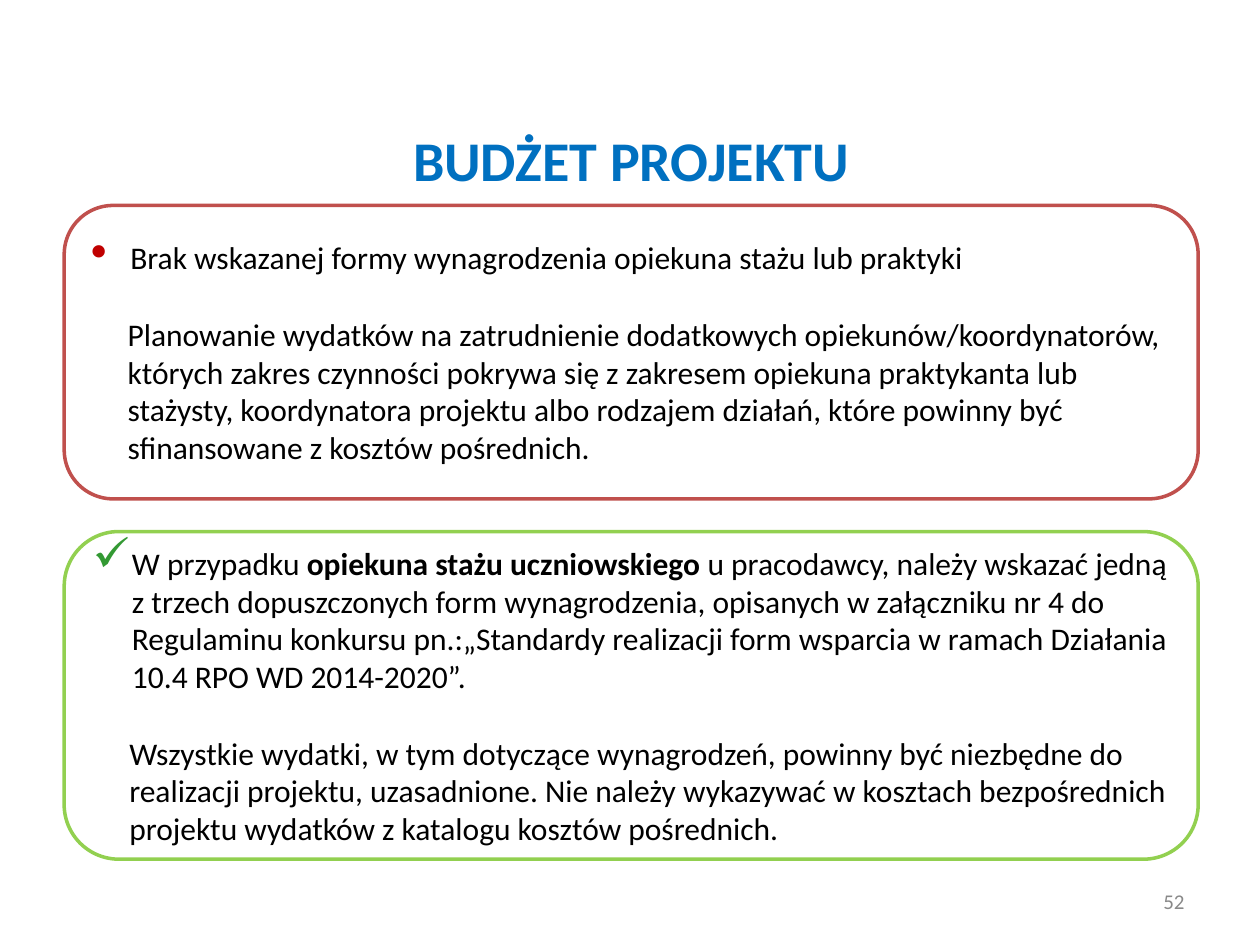
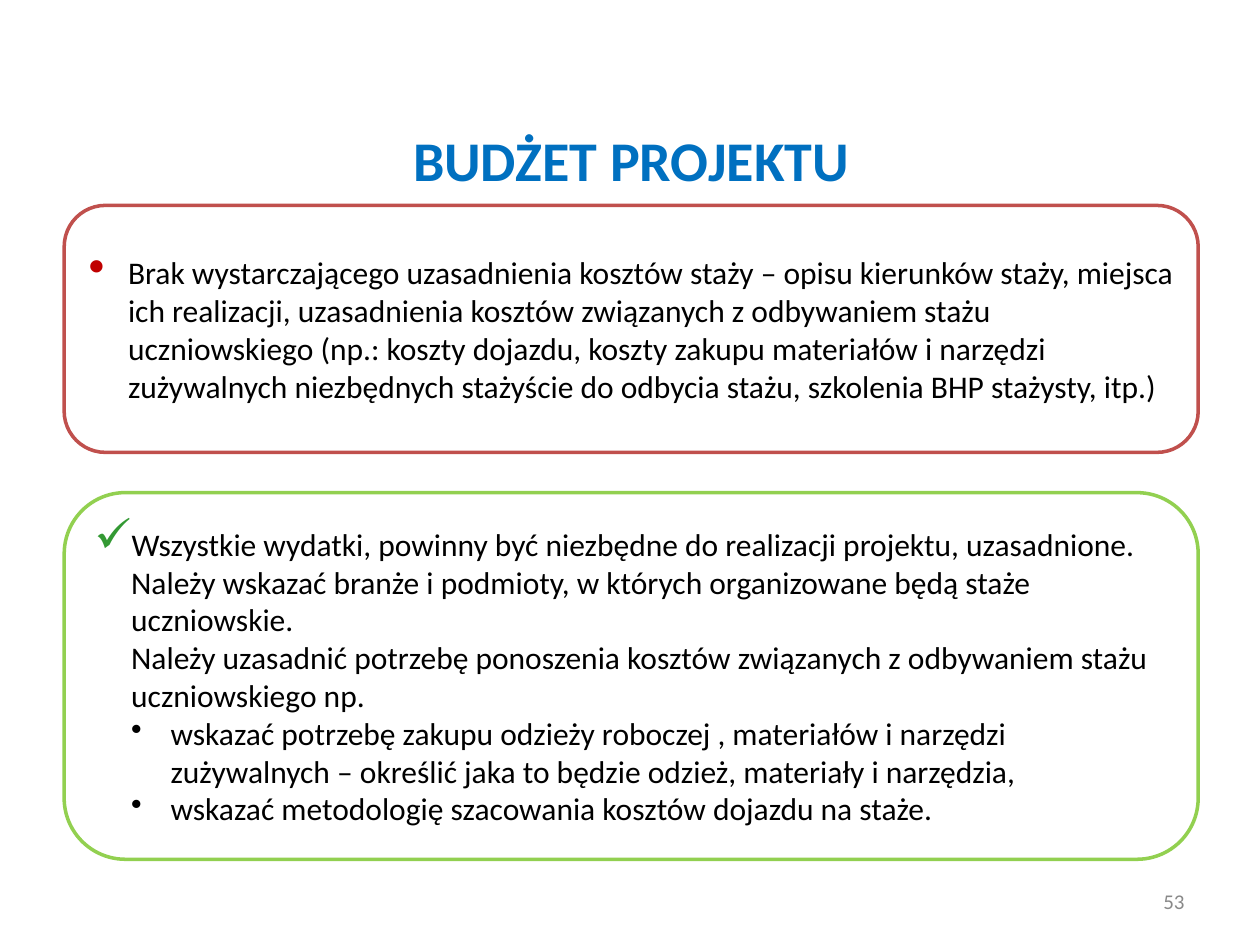
from lxml import etree
from pptx import Presentation
from pptx.dml.color import RGBColor
from pptx.enum.shapes import MSO_SHAPE
from pptx.enum.text import MSO_ANCHOR, MSO_AUTO_SIZE, PP_ALIGN
from pptx.oxml.ns import qn
from pptx.util import Pt

ROUNDED = MSO_SHAPE.ROUNDED_RECTANGLE
MIDDLE = MSO_ANCHOR.MIDDLE
NO_AUTOFIT = MSO_AUTO_SIZE.NONE
LEFT, CENTER, RIGHT = PP_ALIGN.LEFT, PP_ALIGN.CENTER, PP_ALIGN.RIGHT

FONT = "Calibri"
TITLE_BLUE, TEXT_BLACK, NUMBER_GREY = "0070C0", "000000", "898989"
PROBLEM_LINE, ADVICE_LINE = "C0504D", "92D050"
TITLE = "BUDŻET PROJEKTU"

# Bullet: character, colour and size in percent
DOT = ("•", "C00000", 150)
CHECK = ("✓", "339933", 150)
PLAIN_DOT = ("•", TEXT_BLACK, 100)

PANEL_LEFT, PANEL_WIDTH = 36.7, 648
PROBLEM_TOP, ADVICE_BOTTOM = 117.4, 491
HANG, BODY_INDENT = 22.5, 21
BLANK_LINE = 22


def color(hex_code):
    return RGBColor.from_string(hex_code)


def add_run(para, text, size, hex_code, bold=False):
    span = para.add_run()
    span.text = text
    span.font.name = FONT
    span.font.size = Pt(size)
    span.font.bold = bold
    span.font.color.rgb = color(hex_code)


def format_paragraph(para, bullet, margin, hang):
    properties = para._p.get_or_add_pPr()
    properties.set("marL", str(Pt(margin)))
    properties.set("indent", str(-Pt(hang)))
    if bullet is None:
        etree.SubElement(properties, qn("a:buNone"))
        return
    character, hex_code, percent = bullet
    bullet_color = etree.SubElement(properties, qn("a:buClr"))
    etree.SubElement(bullet_color, qn("a:srgbClr"), val=hex_code)
    etree.SubElement(properties, qn("a:buSzPct"), val=str(percent * 1000))
    etree.SubElement(properties, qn("a:buChar"), char=character)


def item(spans, bullet=None, margin=BODY_INDENT, hang=0, before=0):
    """Describe a paragraph; spans is a text or a list of (text, bold)."""
    if isinstance(spans, str):
        spans = [(spans, False)]
    return spans, bullet, margin, hang, before


def add_title(slide):
    title = slide.shapes.title
    title.left, title.top = Pt(PANEL_LEFT), Pt(73.4)
    title.width, title.height = Pt(PANEL_WIDTH), Pt(34.6)
    frame = title.text_frame
    frame.auto_size = NO_AUTOFIT
    frame.vertical_anchor = MIDDLE
    para = frame.paragraphs[0]
    para.alignment = CENTER
    add_run(para, TITLE, 32, TITLE_BLUE, bold=True)


def add_panel(slide, top, bottom, line_color, items):
    panel = slide.shapes.add_shape(ROUNDED, Pt(PANEL_LEFT), Pt(top),
                                   Pt(PANEL_WIDTH), Pt(bottom - top))
    panel.shadow.inherit = False
    panel.fill.background()
    panel.line.color.rgb = color(line_color)
    panel.line.width = Pt(2)
    frame = panel.text_frame
    frame.word_wrap = True
    frame.vertical_anchor = MIDDLE
    for index, (spans, bullet, margin, hang, before) in enumerate(items):
        para = frame.add_paragraph() if index else frame.paragraphs[0]
        para.alignment = LEFT
        if before:
            para.space_before = Pt(before)
        format_paragraph(para, bullet, margin, hang)
        for text, bold in spans:
            add_run(para, text, 18, TEXT_BLACK, bold)


def add_page_number(slide, number):
    box = slide.shapes.add_textbox(Pt(516), Pt(500.4), Pt(168), Pt(28.8))
    frame = box.text_frame
    frame.word_wrap = True
    frame.vertical_anchor = MIDDLE
    para = frame.paragraphs[0]
    para.alignment = RIGHT
    add_run(para, str(number), 12, NUMBER_GREY)


def add_budget_slide(deck, number, problem_bottom, problems, advice_top, advice):
    slide = deck.slides.add_slide(deck.slide_layouts[5])
    add_title(slide)
    add_panel(slide, PROBLEM_TOP, problem_bottom, PROBLEM_LINE, problems)
    add_panel(slide, advice_top, ADVICE_BOTTOM, ADVICE_LINE, advice)
    add_page_number(slide, number)


def main():
    deck = Presentation()
    deck.slide_width, deck.slide_height = Pt(720), Pt(540)

    supervisor_problems = [
        item("Brak wskazanej formy wynagrodzenia opiekuna stażu lub praktyki",
             DOT, HANG, HANG),
        item("Planowanie wydatków na zatrudnienie dodatkowych "
             "opiekunów/koordynatorów, których zakres czynności pokrywa się "
             "z zakresem opiekuna praktykanta lub stażysty, koordynatora "
             "projektu albo rodzajem działań, które powinny być "
             "sfinansowane z kosztów pośrednich.", before=BLANK_LINE),
    ]
    supervisor_advice = [
        item([("W przypadku ", False),
              ("opiekuna stażu uczniowskiego ", True),
              ("u pracodawcy, należy wskazać jedną z trzech dopuszczonych "
               "form wynagrodzenia, opisanych w załączniku nr 4 do "
               "Regulaminu konkursu pn.:„Standardy realizacji form wsparcia "
               "w ramach Działania 10.4 RPO WD 2014-2020”.", False)],
             CHECK, HANG, HANG),
        item("Wszystkie wydatki, w tym dotyczące wynagrodzeń, powinny być "
             "niezbędne do realizacji projektu, uzasadnione. Nie należy "
             "wykazywać w kosztach bezpośrednich projektu wydatków "
             "z katalogu kosztów pośrednich.", before=BLANK_LINE),
    ]
    add_budget_slide(deck, 52, 285.1, supervisor_problems,
                     303.8, supervisor_advice)

    cost_problems = [
        item("Brak wystarczającego uzasadnienia kosztów staży – opisu "
             "kierunków staży, miejsca ich realizacji, uzasadnienia kosztów "
             "związanych z odbywaniem stażu uczniowskiego (np.: koszty "
             "dojazdu, koszty zakupu materiałów i narzędzi zużywalnych "
             "niezbędnych stażyście do odbycia stażu, szkolenia BHP "
             "stażysty, itp.)", DOT, HANG, HANG),
    ]
    sub_margin = BODY_INDENT + HANG
    cost_advice = [
        item("Wszystkie wydatki, powinny być niezbędne do realizacji "
             "projektu, uzasadnione. Należy wskazać branże i podmioty, "
             "w których organizowane będą staże uczniowskie.",
             CHECK, BODY_INDENT, BODY_INDENT),
        item("Należy uzasadnić potrzebę ponoszenia kosztów związanych "
             "z odbywaniem stażu uczniowskiego np."),
        item("wskazać potrzebę zakupu odzieży roboczej , materiałów "
             "i narzędzi zużywalnych – określić jaka to będzie odzież, "
             "materiały i narzędzia,", PLAIN_DOT, sub_margin, HANG),
        item("wskazać metodologię szacowania kosztów dojazdu na staże.",
             PLAIN_DOT, sub_margin, HANG),
    ]
    add_budget_slide(deck, 53, 258.5, cost_problems, 281.5, cost_advice)

    deck.save("out.pptx")


if __name__ == "__main__":
    main()
